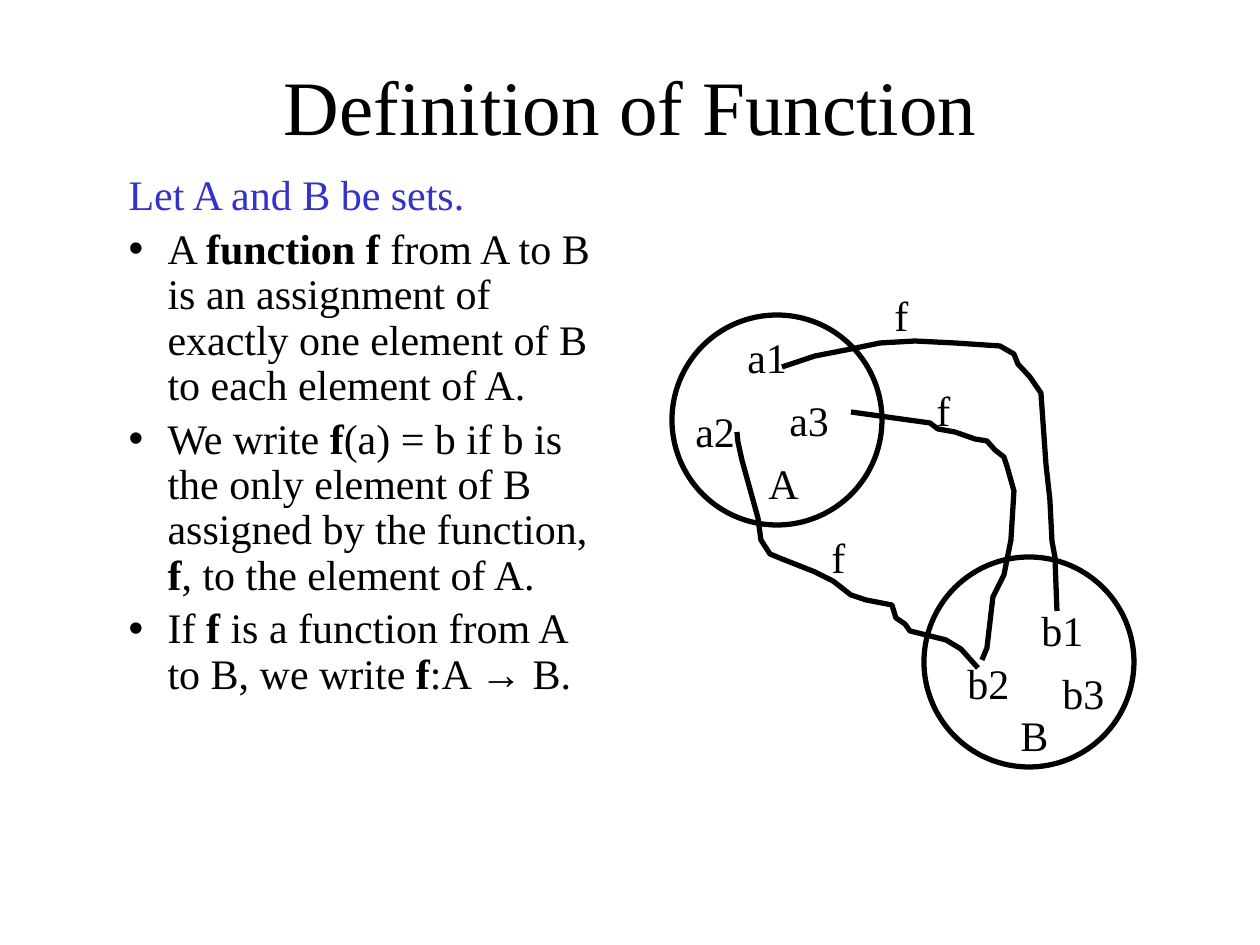
import pptx
import pptx.util
import pptx.dml.color
import pptx.enum.shapes
import pptx.enum.text
import pptx.oxml.ns
import lxml.etree

PX = 914400 // 126
FONT = "Times New Roman"
BLACK = pptx.dml.color.RGBColor(0x00, 0x00, 0x00)
BLUE = pptx.dml.color.RGBColor(0x33, 0x33, 0xCC)
TEXT_SIZE = 24
TITLE_SIZE = 44

TITLE = "Definition of Function"
# Each paragraph: colour, bulleted, spans of (text, bold)
DEFINITION = [
    (BLUE, False, [("Let A and B be sets.", False)]),
    (BLACK, True, [
        ("A ", False), ("function f", True),
        (" from A to B is an assignment of exactly one element of B "
         "to each element of A.", False)]),
    (BLACK, True, [
        ("We write ", False), ("f", True),
        ("(a) = b if b is the only element of B assigned by the function, ", False),
        ("f", True), (", to the element of A.", False)]),
    (BLACK, True, [
        ("If ", False), ("f", True),
        (" is a function from A to B, we write ", False),
        ("f", True), (":A → B.", False)]),
]

SET_DIAMETER = 210
SET_CORNERS = [(672, 315), (924, 557)]

# Mapping curves, as points from an element of A to an element of B
MAPPINGS = [
    # a1 to b1
    [(782, 367), (815, 356), (851, 349), (880, 343), (915, 341), (955, 343),
     (1000, 346), (1014, 354), (1018, 364), (1030, 377), (1041, 393),
     (1046, 464), (1050, 500), (1052, 541), (1055, 557), (1057, 611)],
    # a2 to b2
    [(737, 432), (738, 442), (742, 460), (750, 489), (758, 518), (761, 540),
     (770, 554), (782, 559), (815, 572), (833, 581), (851, 595), (866, 600),
     (892, 605), (896, 618), (905, 624), (910, 631), (946, 640), (961, 649),
     (978, 668)],
    # a3 to b2
    [(851, 412), (930, 423), (938, 429), (955, 432), (975, 439), (987, 441),
     (995, 450), (1004, 457), (1007, 466), (1014, 491), (1011, 540),
     (1004, 575), (993, 597), (987, 648), (982, 660)],
]

# Text, left, top, width
LABELS = [
    ("a1", 735, 325, 73), ("a2", 683, 399, 105), ("a3", 777, 388, 105),
    ("A", 756, 451, 84),
    ("b1", 1029, 598, 73), ("b2", 955, 651, 95), ("b3", 1050, 661, 105),
    ("B", 1008, 703, 95),
    ("f", 882, 283, 116), ("f", 819, 525, 116), ("f", 924, 378, 116),
]
LABEL_HEIGHT = 63


def place(shape, left, top, width, height):
    shape.left, shape.top = left * PX, top * PX
    shape.width, shape.height = width * PX, height * PX


def style(span, size, colour=BLACK, bold=False):
    span.font.name = FONT
    span.font.size = pptx.util.Pt(size)
    span.font.color.rgb = colour
    span.font.bold = bold


def outline(shape):
    shape.shadow.inherit = False
    shape.fill.background()
    shape.line.color.rgb = BLACK
    shape.line.width = pptx.util.Pt(3)


def indent(para, bulleted):
    """Hang the first line by 39 px and set or clear the bullet."""
    properties = para._p.get_or_add_pPr()
    properties.set("marL", str(102 * PX))
    properties.set("indent", str(-39 * PX))
    tag = "a:buChar" if bulleted else "a:buNone"
    bullet = lxml.etree.SubElement(properties, pptx.oxml.ns.qn(tag))
    if bulleted:
        bullet.set("char", "•")


def add_title(page):
    title = page.shapes.title
    place(title, 95, 42, 1071, 157)
    frame = title.text_frame
    frame.text = TITLE
    frame.vertical_anchor = pptx.enum.text.MSO_ANCHOR.TOP
    frame.margin_top = 16 * PX
    frame.paragraphs[0].alignment = pptx.enum.text.PP_ALIGN.CENTER
    style(frame.paragraphs[0].runs[0], TITLE_SIZE)


def add_definition(page):
    body = page.placeholders[1]
    place(body, 53, 168, 567, 567)
    frame = body.text_frame
    frame.auto_size = pptx.enum.text.MSO_AUTO_SIZE.NONE
    for number, (colour, bulleted, spans) in enumerate(DEFINITION):
        para = frame.add_paragraph() if number else frame.paragraphs[0]
        para.line_spacing = 0.9
        para.space_before = pptx.util.Pt(4.8 if number else 0)
        indent(para, bulleted)
        for text, bold in spans:
            span = para.add_run()
            span.text = text
            style(span, TEXT_SIZE, colour, bold)


def add_diagram(page):
    for left, top in SET_CORNERS:
        circle = page.shapes.add_shape(
            pptx.enum.shapes.MSO_SHAPE.OVAL, left * PX, top * PX,
            SET_DIAMETER * PX, SET_DIAMETER * PX)
        outline(circle)
    for start, *rest in MAPPINGS:
        builder = page.shapes.build_freeform(*start, scale=PX)
        builder.add_line_segments(rest, close=False)
        outline(builder.convert_to_shape())
    for text, left, top, width in LABELS:
        box = page.shapes.add_textbox(0, 0, 0, 0)
        place(box, left, top, width, LABEL_HEIGHT)
        box.text_frame.word_wrap = True
        box.text_frame.text = text
        style(box.text_frame.paragraphs[0].runs[0], TEXT_SIZE)


def main():
    deck = pptx.Presentation()
    deck.slide_width, deck.slide_height = 1260 * PX, 945 * PX
    page = deck.slides.add_slide(deck.slide_layouts.get_by_name("Title and Content"))
    add_title(page)
    add_definition(page)
    add_diagram(page)
    deck.save("out.pptx")


if __name__ == "__main__":
    main()
